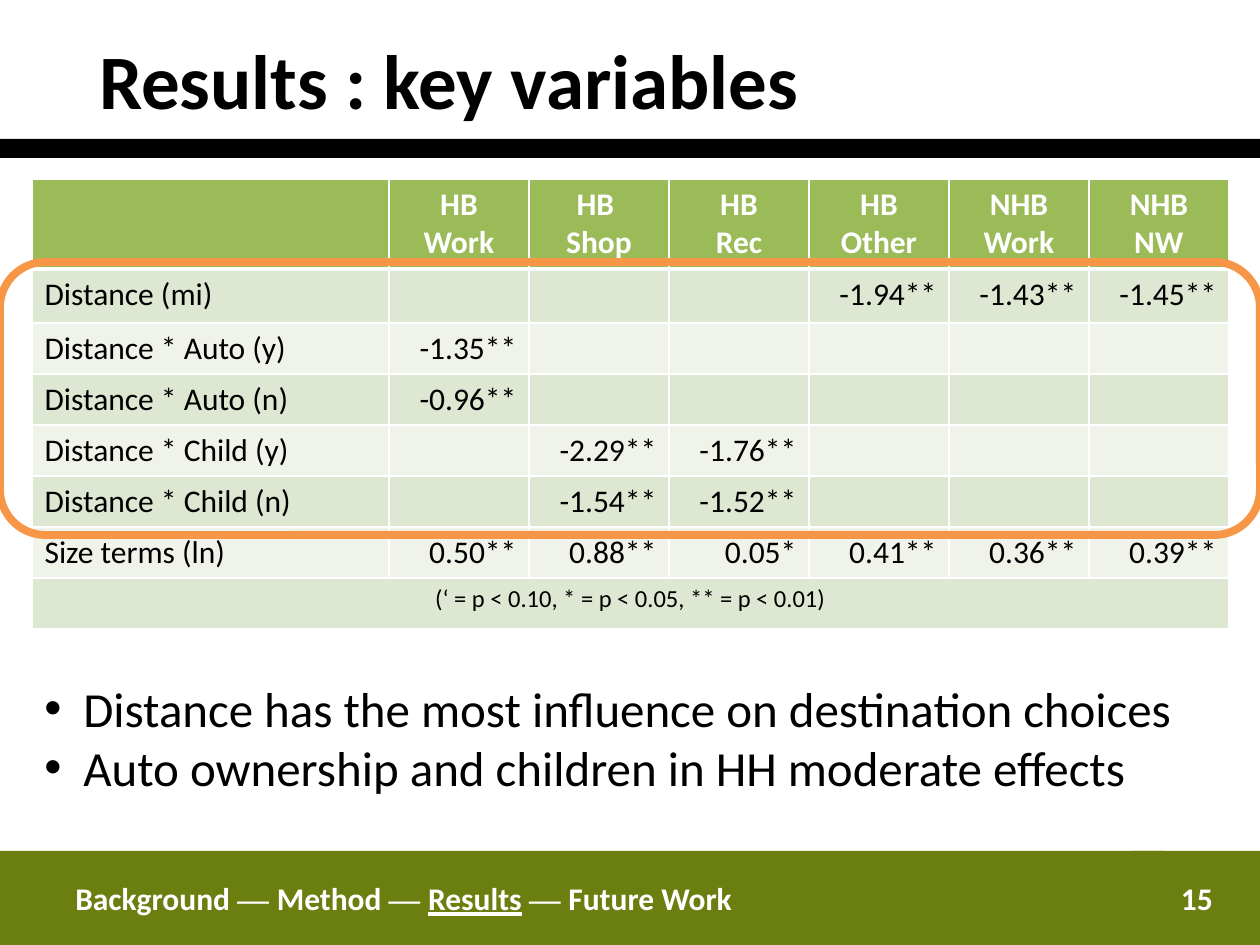
import pptx
import pptx.util
import pptx.dml.color
import pptx.enum.shapes
import pptx.enum.text
import pptx.oxml
import pptx.oxml.ns

EMU_PER_PX = 914400 // 126
SHAPES = pptx.enum.shapes.MSO_SHAPE
ALIGN = pptx.enum.text.PP_ALIGN
MIDDLE = pptx.enum.text.MSO_ANCHOR.MIDDLE
WHITE, BLACK = "FFFFFF", "000000"
OLIVE, GREEN, ORANGE = "6A7F10", "9BBB59", "F79646"
BANDS = ["DEE7D1", "EFF3EA"]


def px(value):
    return pptx.util.Emu(value * EMU_PER_PX)


def color(hex_string):
    return pptx.dml.color.RGBColor.from_string(hex_string)


class SlideWriter:
    font = "Calibri"
    dash_font = "Times New Roman"

    def __init__(self, slide):
        self.slide = slide

    def run(self, para, text, size, fill=BLACK, bold=False, font=None, underline=None):
        span = para.add_run()
        span.text = text
        span.font.name = font or self.font
        span.font.size = pptx.util.Pt(size)
        span.font.bold = bold
        span.font.underline = underline
        span.font.color.rgb = color(fill)

    def shape(self, kind, left, top, width, height, fill=None, line=None, weight=1):
        shape = self.slide.shapes.add_shape(kind, px(left), px(top), px(width), px(height))
        shape.shadow.inherit = False
        if fill:
            shape.fill.solid()
            shape.fill.fore_color.rgb = color(fill)
        else:
            shape.fill.background()
        if line:
            shape.line.color.rgb = color(line)
            shape.line.width = pptx.util.Pt(weight)
        else:
            shape.line.fill.background()
        return shape

    def bar(self, left, top, width, height, fill, align=ALIGN.LEFT):
        bar = self.shape(SHAPES.RECTANGLE, left, top, width, height, fill)
        bar.text_frame.vertical_anchor = MIDDLE
        para = bar.text_frame.paragraphs[0]
        para.alignment = align
        return para

    def text_box(self, left, top, width, height):
        box = self.slide.shapes.add_textbox(px(left), px(top), px(width), px(height))
        box.text_frame.word_wrap = True
        return box.text_frame

    def title(self, text, left, top, width, height, indent):
        frame = self.text_box(left, top, width, height)
        frame.vertical_anchor = MIDDLE
        frame.margin_left = px(indent)
        self.run(frame.paragraphs[0], text, 44, bold=True)

    def bullets(self, lines, left, top, width, height, indent):
        frame = self.text_box(left, top, width, height)
        for index, line in enumerate(lines):
            para = frame.paragraphs[0] if index == 0 else frame.add_paragraph()
            properties = para._p.get_or_add_pPr()
            properties.set("marL", str(px(indent)))
            properties.set("indent", str(-px(indent)))
            namespace = pptx.oxml.ns.nsdecls("a")
            properties.append(pptx.oxml.parse_xml(f'<a:buFont {namespace} typeface="Arial"/>'))
            properties.append(pptx.oxml.parse_xml(f'<a:buChar {namespace} char="•"/>'))
            self.run(para, line, 28)

    def cell(self, cell, lines, fill, align, size=18, ink=BLACK, bold=False, top=1, bottom=1):
        cell.fill.solid()
        cell.fill.fore_color.rgb = color(fill)
        properties = cell._tc.get_or_add_tcPr()
        for index, (side, weight) in enumerate(zip("LRTB", (1, 1, top, bottom))):
            border = pptx.oxml.parse_xml(
                f'<a:ln{side} {pptx.oxml.ns.nsdecls("a")} w="{pptx.util.Pt(weight)}">'
                f'<a:solidFill><a:srgbClr val="{WHITE}"/></a:solidFill></a:ln{side}>')
            properties.insert(index, border)
        frame = cell.text_frame
        for index, line in enumerate(lines):
            para = frame.paragraphs[0] if index == 0 else frame.add_paragraph()
            para.alignment = align
            if line:
                self.run(para, line, size, ink, bold)

    def table(self, header, rows, note, left, top, widths, heights):
        frame = self.slide.shapes.add_table(
            len(heights), len(widths), px(left), px(top), px(sum(widths)), px(sum(heights)))
        table = frame.table
        for column, width in zip(table.columns, widths):
            column.width = px(width)
        for row, height in zip(table.rows, heights):
            row.height = px(height)
        for column, lines in enumerate(header):
            self.cell(table.cell(0, column), lines, GREEN, ALIGN.CENTER,
                      ink=WHITE, bold=True, bottom=3)
        for number, row in enumerate(rows, 1):
            for column, value in enumerate(row):
                self.cell(table.cell(number, column), [value], BANDS[(number - 1) % 2],
                          ALIGN.RIGHT if column else ALIGN.LEFT, top=3 if number == 1 else 1)
        last = len(heights) - 1
        note_cell = table.cell(last, 0)
        note_cell.merge(table.cell(last, len(widths) - 1))
        self.cell(note_cell, [note], BANDS[(last - 1) % 2], ALIGN.CENTER, size=14)


HEADER = [[], ["HB", "Work"], ["HB ", "Shop"], ["HB", "Rec"],
          ["HB", "Other"], ["NHB Work"], ["NHB", "NW"]]
ROWS = [
    ["Distance (mi)", "", "", "", "-1.94**", "-1.43**", "-1.45**"],
    ["Distance * Auto (y)", "-1.35**", "", "", "", "", ""],
    ["Distance * Auto (n)", "-0.96**", "", "", "", "", ""],
    ["Distance * Child (y)", "", "-2.29**", "-1.76**", "", "", ""],
    ["Distance * Child (n)", "", "-1.54**", "-1.52**", "", "", ""],
    ["Size terms (ln)", "0.50**", "0.88**", "0.05*", "0.41**", "0.36**", "0.39**"],
]
SECTIONS = ["Background", "Method", "Results", "Future Work"]
CURRENT = "Results"


def main():
    deck = pptx.Presentation()
    deck.slide_width, deck.slide_height = px(1260), px(945)
    page = SlideWriter(deck.slides.add_slide(deck.slide_layouts[6]))

    page.bar(0, 139, 1260, 19, BLACK)
    page.bar(0, 851, 63, 94, OLIVE)
    page.title("Results : key variables", -1, 0, 893, 158, 100)

    number = page.bar(1134, 851, 126, 94, OLIVE, ALIGN.CENTER)
    page.run(number, "15", 18, WHITE, True)
    footer = page.bar(63, 851, 1102, 94, OLIVE)
    for index, section in enumerate(SECTIONS):
        if index:
            page.run(footer, " ", 18, WHITE, True)
            page.run(footer, "— ", 18, WHITE, True, page.dash_font)
        page.run(footer, section, 18, WHITE, True, underline=section == CURRENT)

    page.table(HEADER, ROWS, "(‘ = p < 0.10, * = p < 0.05, ** = p < 0.01)",
               32, 179, [357] + [140] * 6, [90, 54] + [51] * 6)
    page.bullets(["Distance has the most influence on destination choices",
                  "Auto ownership and children in HH moderate effects"],
                 32, 672, 1187, 131, 39)
    page.shape(SHAPES.ROUNDED_RECTANGLE, 0, 262, 1260, 273, line=ORANGE, weight=4.5)

    deck.save("out.pptx")


if __name__ == "__main__":
    main()
